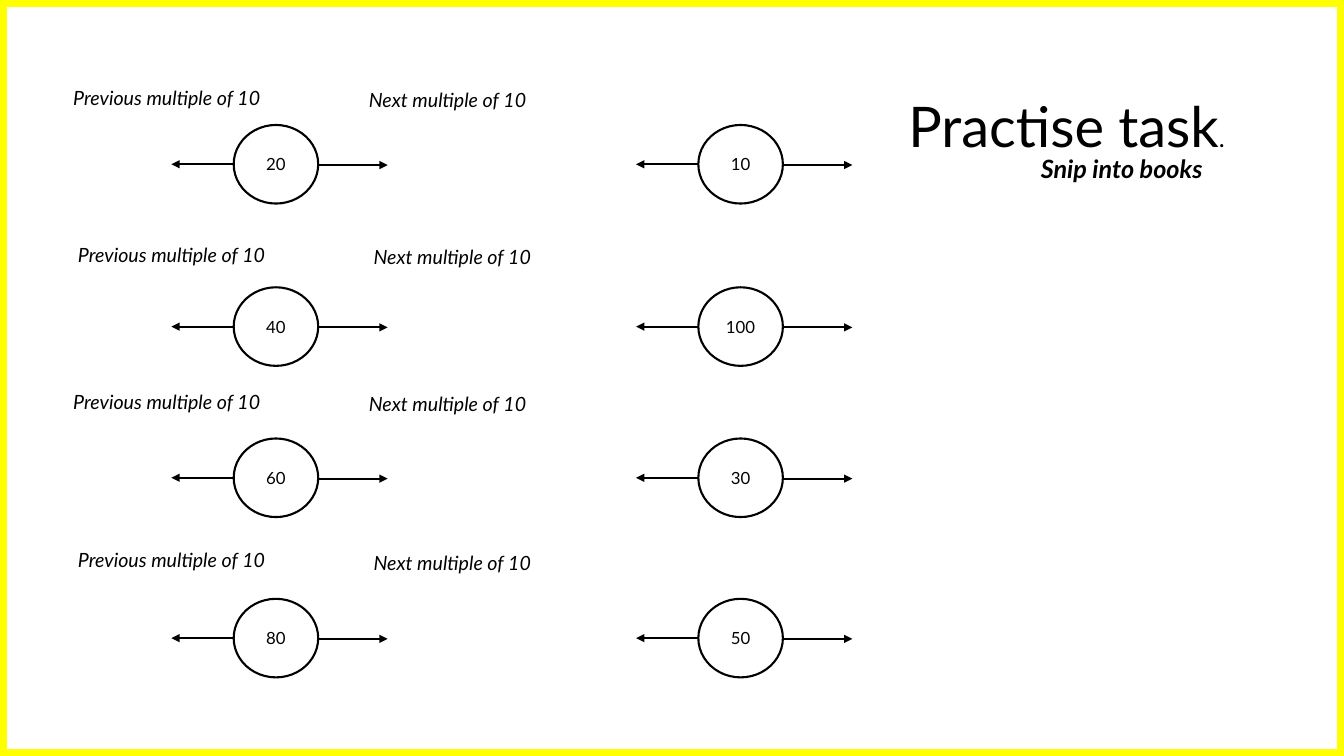
from dataclasses import dataclass

from lxml import etree
from pptx import Presentation
from pptx import util as u
from pptx.dml.color import RGBColor
from pptx.enum import shapes, text
from pptx.oxml import ns

BLACK = RGBColor(0, 0, 0)
WHITE = RGBColor(255, 255, 255)
YELLOW = RGBColor(255, 255, 0)
FONT = "Lato"

# Measures in centimetres
CIRCLE_W, CIRCLE_H = 2.13, 1.98
COLUMN_LEFTS = (5.89, 17.6)
PREVIOUS_REACH, NEXT_REACH = 1.57, 1.75


@dataclass(frozen=True)
class Row:
    circle_top: float
    label_left: float
    label_top: float
    numbers: tuple[str, str]


ROWS = (
    Row(3.15, 1.45, 2.03, ("20", "10")),
    Row(7.24, 1.57, 5.99, ("40", "100")),
    Row(11.05, 1.45, 9.7, ("60", "30")),
    Row(15.09, 1.57, 13.69, ("80", "50")),
)


def write(paragraph, words: str, size: float, bold: bool = False,
          italic: bool = False, align=text.PP_ALIGN.LEFT) -> None:
    """Append a formatted run to a paragraph."""
    paragraph.alignment = align
    run = paragraph.add_run()
    run.text = words
    font = run.font
    font.name, font.size = FONT, u.Pt(size)
    font.bold, font.italic = bold, italic
    font.color.rgb = BLACK


def add_text_area(slide, left: float, top: float, width: float, height: float,
                  wrap: bool = True):
    """Add an empty text box and return its first paragraph."""
    area = slide.shapes.add_textbox(
        u.Cm(left), u.Cm(top), u.Cm(width), u.Cm(height)).text_frame
    area.word_wrap = wrap
    area.auto_size = text.MSO_AUTO_SIZE.SHAPE_TO_FIT_TEXT
    return area.paragraphs[0]


def add_arrow(slide, start_x: float, end_x: float, y: float) -> None:
    arrow = slide.shapes.add_connector(
        shapes.MSO_CONNECTOR.STRAIGHT,
        u.Cm(start_x), u.Cm(y), u.Cm(end_x), u.Cm(y))
    arrow.line.color.rgb = BLACK
    arrow.line.width = u.Pt(1.5)
    head = etree.SubElement(arrow.line._get_or_add_ln(), ns.qn("a:tailEnd"))
    head.set("type", "triangle")
    etree.SubElement(arrow._element.spPr, ns.qn("a:effectLst"))


def add_number(slide, number: str, left: float, top: float) -> None:
    """Draw a circled number with an arrow to either side."""
    circle = slide.shapes.add_shape(
        shapes.MSO_SHAPE.OVAL,
        u.Cm(left), u.Cm(top), u.Cm(CIRCLE_W), u.Cm(CIRCLE_H))
    circle.shadow.inherit = False
    circle.fill.solid()
    circle.fill.fore_color.rgb = WHITE
    circle.line.color.rgb = BLACK
    circle.line.width = u.Pt(1.5)
    circle.text_frame.vertical_anchor = text.MSO_ANCHOR.MIDDLE
    write(circle.text_frame.paragraphs[0], number, 12,
          align=text.PP_ALIGN.CENTER)

    middle, right = top + CIRCLE_H / 2, left + CIRCLE_W
    add_arrow(slide, left, left - PREVIOUS_REACH, middle)
    add_arrow(slide, right, right + NEXT_REACH, middle + 0.02)


def add_labels(slide, left: float, top: float) -> None:
    previous_label = add_text_area(slide, left, top, 5.51, 0.86)
    next_label = add_text_area(slide, left + 7.39, top + 0.06, 4.88, 0.86)
    for label, words in ((previous_label, "Previous multiple of 10"),
                         (next_label, "Next multiple of 10")):
        write(label, words, 14, italic=True, align=text.PP_ALIGN.CENTER)


def main() -> None:
    deck = Presentation()
    deck.slide_width, deck.slide_height = u.Cm(33.87), u.Cm(19.05)
    slide = deck.slides.add_slide(deck.slide_layouts[6])

    # Heading
    heading = add_text_area(slide, 22.48, 2.18, 8.64, 1.96, wrap=False)
    write(heading, "Practise task", 40, align=text.PP_ALIGN.RIGHT)
    write(heading, ".", 18, align=text.PP_ALIGN.RIGHT)
    instruction = add_text_area(slide, 25.98, 3.73, 4.98, 1.02, wrap=False)
    write(instruction, "Snip into books", 18, bold=True, italic=True)

    # Number exercises
    for row in ROWS:
        for number, left in zip(row.numbers, COLUMN_LEFTS):
            add_number(slide, number, left, row.circle_top)
        add_labels(slide, row.label_left, row.label_top)

    # Page border
    border = slide.shapes.add_shape(
        shapes.MSO_SHAPE.RECTANGLE, 0, 0, deck.slide_width, deck.slide_height)
    border.shadow.inherit = False
    border.fill.background()
    border.line.color.rgb = YELLOW
    border.line.width = u.Pt(10)

    deck.save("out.pptx")


if __name__ == "__main__":
    main()
